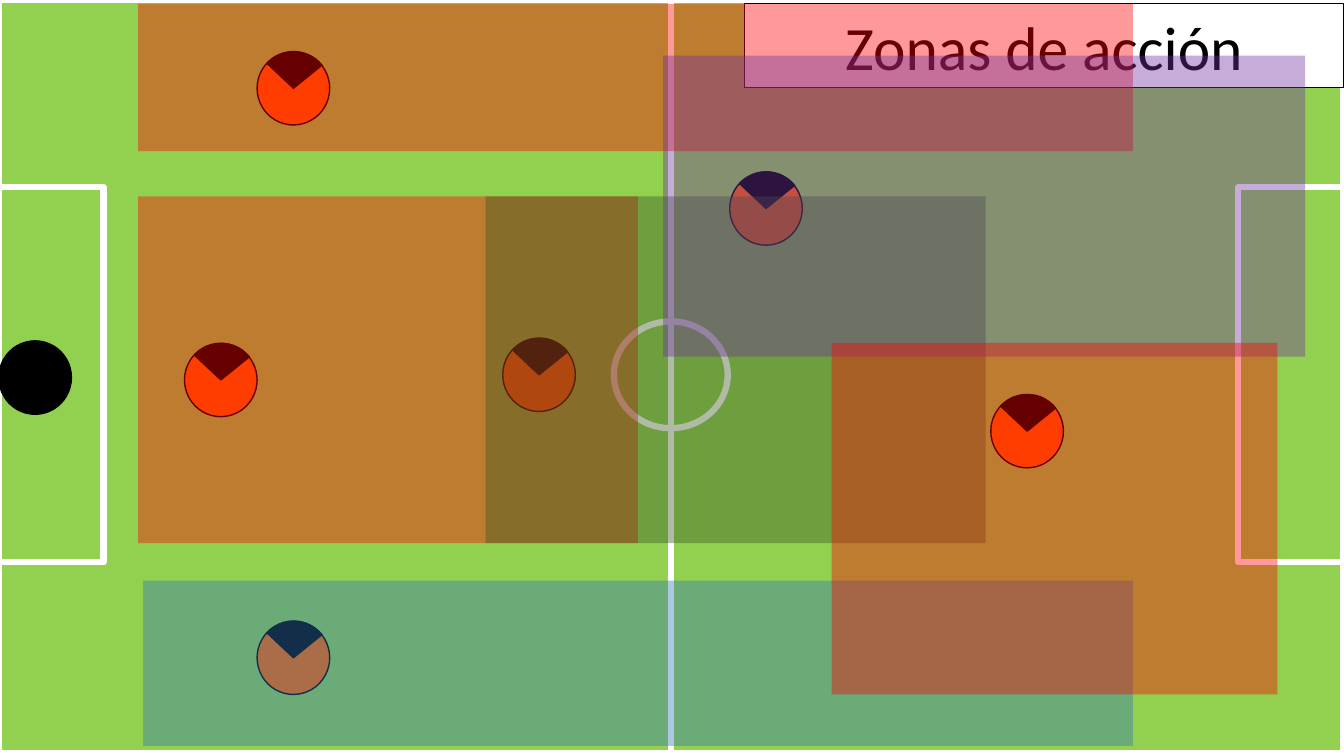
import pptx
import pptx.util
import pptx.dml.color
import pptx.enum.shapes
import pptx.enum.text
import pptx.oxml
import pptx.oxml.ns
import lxml.etree

Cm = pptx.util.Cm
Pt = pptx.util.Pt
RGBColor = pptx.dml.color.RGBColor
SHAPE = pptx.enum.shapes.MSO_SHAPE

GRASS = RGBColor(0x92, 0xD0, 0x50)
WHITE = RGBColor(0xFF, 0xFF, 0xFF)
BLACK = RGBColor(0x00, 0x00, 0x00)
ORANGE = RGBColor(0xFF, 0x66, 0x00)
RED = RGBColor(0xFF, 0x00, 0x00)
BLUE = RGBColor(0x2E, 0x75, 0xB6)
DARK_GREEN = RGBColor(0x38, 0x57, 0x23)
PURPLE = RGBColor(0x70, 0x30, 0xA0)

SLIDE_WIDTH, SLIDE_HEIGHT = 33.87, 19.05
LEFT_EDGE, TOP_EDGE = -0.03, -0.08
TOKEN_SIZE = (1.83, 1.85)
AREA_SIZE = (2.64, 9.45)
CENTRAL_ZONE_SIZE = (12.6, 8.74)


class Board:
    font = "Calibri"
    title_size = 44
    marking_width = 4.5
    zone_opacity = 40

    def __init__(self, page):
        self.page = page

    def shape(self, kind, place, size, fill=None, line=None, width=1):
        shape = self.page.shapes.add_shape(kind, *map(Cm, place + size))
        shape.shadow.inherit = False
        self.paint(shape, fill, line, width)
        return shape

    def paint(self, shape, fill, line, width):
        if fill is None:
            shape.fill.background()
        else:
            shape.fill.solid()
            shape.fill.fore_color.rgb = fill
        if line is None:
            shape.line.fill.background()
        else:
            shape.line.color.rgb = line
            shape.line.width = Pt(width)

    def marking(self, kind, place, size):
        self.shape(kind, place, size, line=WHITE, width=self.marking_width)

    def halfway_line(self, pitch):
        line = self.page.shapes.add_connector(
            pptx.enum.shapes.MSO_CONNECTOR.STRAIGHT, 0, 0, 0, 0)
        line.begin_connect(pitch, 0)
        line.end_connect(pitch, 2)
        line.line.color.rgb = WHITE
        line.line.width = Pt(self.marking_width)
        properties = line._element.spPr
        lxml.etree.SubElement(properties, pptx.oxml.ns.qn("a:effectLst"))

    def player(self, place):
        """Draw a disc with a dark wedge that shows where the player faces."""
        self.shape(SHAPE.OVAL, place, TOKEN_SIZE, ORANGE, BLACK)
        wedge = self.shape(SHAPE.PIE, place, TOKEN_SIZE, BLACK, BLACK)
        wedge.adjustments[0] = 103.32
        wedge.adjustments[1] = 162
        wedge.rotation = 51

    def zone(self, place, size, color):
        zone = self.shape(SHAPE.RECTANGLE, place, size, color)
        tint = zone._element.spPr.find(".//" + pptx.oxml.ns.qn("a:srgbClr"))
        alpha = lxml.etree.SubElement(tint, pptx.oxml.ns.qn("a:alpha"))
        alpha.set("val", str(self.zone_opacity * 1000))

    def title(self, text, place, size):
        """Format the title and bring it in front of what is drawn so far."""
        title = self.page.shapes.title
        title.left, title.top, title.width, title.height = map(Cm, place + size)
        self.paint(title, WHITE, BLACK, 0.75)
        frame = title.text_frame
        frame.text = text
        frame.word_wrap = True
        frame.vertical_anchor = pptx.enum.text.MSO_ANCHOR.MIDDLE
        para = frame.paragraphs[0]
        para.alignment = pptx.enum.text.PP_ALIGN.CENTER
        font = para.runs[0].font
        font.name = self.font
        font.size = Pt(self.title_size)
        font.color.rgb = BLACK
        self.page.shapes._spTree.append(title._element)


def draw_pitch(board):
    pitch = board.shape(SHAPE.RECTANGLE, (LEFT_EDGE, TOP_EDGE),
                        (SLIDE_WIDTH, SLIDE_HEIGHT), GRASS)
    board.halfway_line(pitch)
    board.marking(SHAPE.OVAL, (15.47, 8.1), (2.87, 2.69))
    for left in (LEFT_EDGE, LEFT_EDGE + SLIDE_WIDTH - AREA_SIZE[0]):
        board.marking(SHAPE.RECTANGLE, (left, 4.72), AREA_SIZE)
    board.marking(SHAPE.RECTANGLE, (LEFT_EDGE, 0), (SLIDE_WIDTH, 18.97))


def main():
    deck = pptx.Presentation()
    deck.slide_width, deck.slide_height = Cm(SLIDE_WIDTH), Cm(SLIDE_HEIGHT)
    board = Board(deck.slides.add_slide(deck.slide_layouts[5]))

    draw_pitch(board)
    for place in ((6.48, 1.3), (4.65, 8.65), (6.48, 15.65),
                  (12.67, 8.52), (18.39, 4.33)):
        board.player(place)
    board.zone((3.61, 14.63), (24.94, 4.17), BLUE)
    board.player((24.97, 9.94))
    board.shape(SHAPE.OVAL, (LEFT_EDGE, 8.59), TOKEN_SIZE, BLACK, BLACK)
    board.title("Zonas de acción", (18.77, 0.08), (15.09, 2.13))
    for place, size, color in (
        ((3.48, 0.1), (25.07, 3.71), RED),
        ((3.48, 4.95), CENTRAL_ZONE_SIZE, RED),
        ((12.24, 4.95), CENTRAL_ZONE_SIZE, DARK_GREEN),
        ((16.71, 1.4), (16.18, 7.59), PURPLE),
        ((20.96, 8.64), (11.23, 8.86), RED),
    ):
        board.zone(place, size, color)

    deck.save("out.pptx")


if __name__ == "__main__":
    main()
